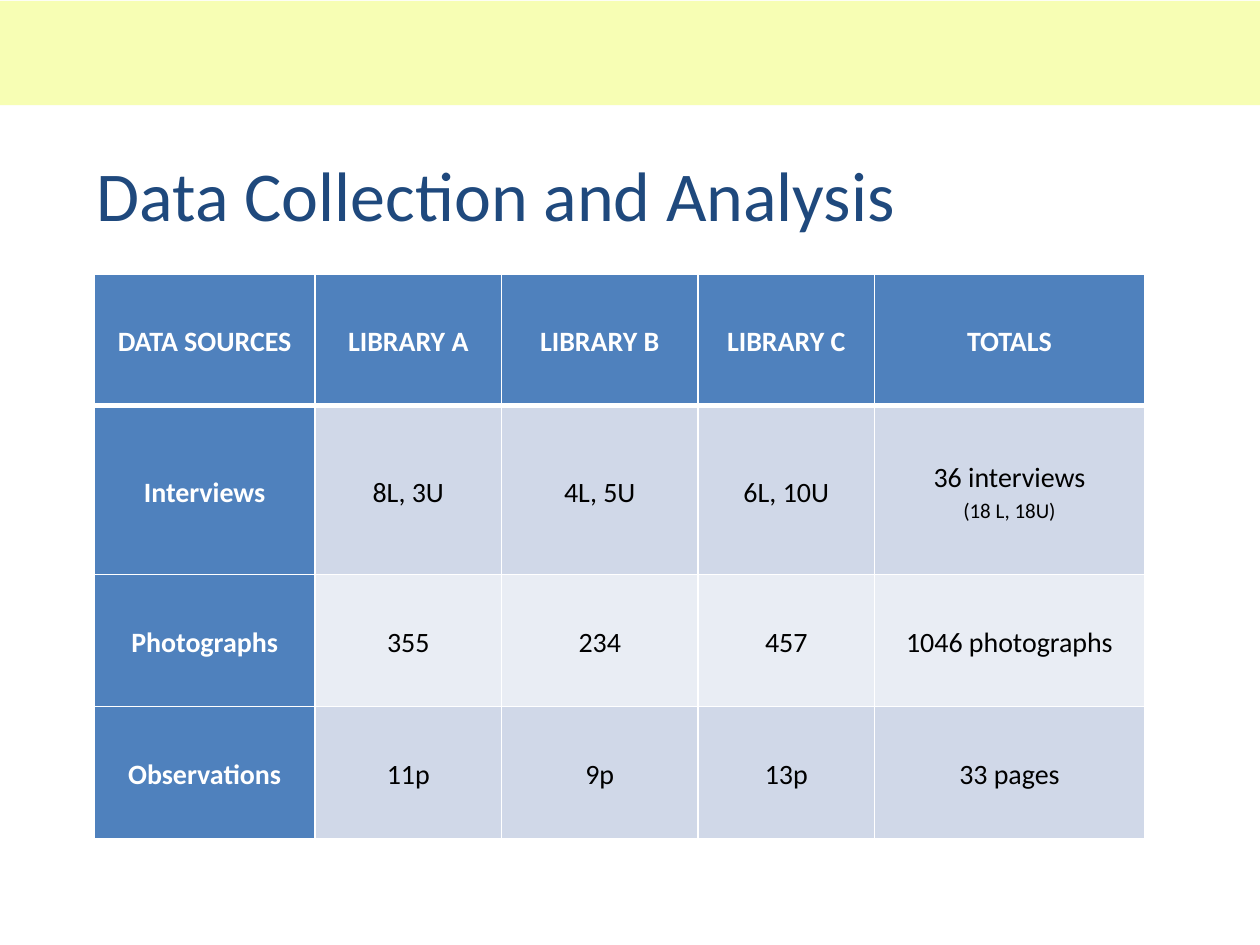
from dataclasses import dataclass

from lxml.etree import SubElement
from pptx import Presentation
from pptx.dml.color import RGBColor
from pptx.enum.shapes import MSO_SHAPE
from pptx.enum.text import MSO_ANCHOR, MSO_AUTO_SIZE, PP_ALIGN
from pptx.oxml.ns import qn
from pptx.util import Cm, Pt

BLUE, WHITE, BLACK = "4F81BD", "FFFFFF", "000000"
BANDS = ("D0D8E8", "E9EDF4")
COL_WIDTHS = (4.45, 3.76, 3.96, 3.56, 5.44)


@dataclass
class Row:
    height: float
    texts: tuple[str, ...]
    note: str = ""


ROWS = (
    Row(2.66, ("DATA SOURCES", "LIBRARY A", "LIBRARY B", "LIBRARY C", "TOTALS")),
    Row(3.4, ("Interviews", "8L, 3U", "4L, 5U", "6L, 10U", "36 interviews"), "(18 L, 18U)"),
    Row(2.66, ("Photographs", "355", "234", "457", "1046 photographs")),
    Row(2.66, ("Observations", "11p", "9p", "13p", "33 pages")),
)


def rgb(value: str) -> RGBColor:
    return RGBColor.from_string(value)


def write(p, text: str, *, size: float = 16, color: str = BLACK, bold: bool = False,
          align: PP_ALIGN = PP_ALIGN.CENTER, spacing: float = 1.15) -> None:
    p.alignment = align
    p.line_spacing = spacing
    r = p.add_run()
    r.text = text
    r.font.name = "Calibri"
    r.font.size = Pt(size)
    r.font.bold = bold
    r.font.color.rgb = rgb(color)


def add_borders(cell, bottom: float) -> None:
    tc_pr = cell._tc.get_or_add_tcPr()
    for side, width in (("L", 1), ("R", 1), ("T", 1), ("B", bottom)):
        ln = SubElement(tc_pr, qn(f"a:ln{side}"), w=str(Pt(width)))
        fill = SubElement(ln, qn("a:solidFill"))
        SubElement(fill, qn("a:srgbClr"), val=WHITE)


def format_cell(cell, fill: str, bottom: float) -> None:
    cell.vertical_anchor = MSO_ANCHOR.MIDDLE
    cell.margin_left = cell.margin_right = Cm(0.18)
    cell.margin_top = cell.margin_bottom = 0
    add_borders(cell, bottom)
    cell.fill.solid()
    cell.fill.fore_color.rgb = rgb(fill)


def add_banner(slide) -> None:
    sp = slide.shapes.add_shape(MSO_SHAPE.RECTANGLE, 0, Cm(0.02), Cm(25.4), Cm(2.1))
    sp.shadow.inherit = False
    sp.fill.solid()
    sp.fill.fore_color.rgb = rgb("F7FEB4")
    sp.line.fill.background()


def add_title(slide, text: str) -> None:
    sp = slide.shapes.title
    sp.left, sp.top, sp.width, sp.height = Cm(1.7), Cm(2.54), Cm(20.95), Cm(2.74)
    tf = sp.text_frame
    tf.auto_size = MSO_AUTO_SIZE.NONE
    tf.vertical_anchor = MSO_ANCHOR.MIDDLE
    write(tf.paragraphs[0], text, size=40, color="1F497D", align=PP_ALIGN.LEFT, spacing=1.0)


def add_data_table(slide) -> None:
    height = sum(row.height for row in ROWS)
    table = slide.shapes.add_table(len(ROWS), len(COL_WIDTHS), Cm(1.9), Cm(5.52),
                                   Cm(sum(COL_WIDTHS)), Cm(height)).table
    for column, width in zip(table.columns, COL_WIDTHS):
        column.width = Cm(width)
    for i, row in enumerate(ROWS):
        table.rows[i].height = Cm(row.height)
        for j, text in enumerate(row.texts):
            cell = table.cell(i, j)
            header = i == 0 or j == 0
            format_cell(cell, BLUE if header else BANDS[(i - 1) % 2], 3 if i == 0 else 1)
            write(cell.text_frame.paragraphs[0], text,
                  color=WHITE if header else BLACK, bold=header)
        if row.note:
            write(cell.text_frame.add_paragraph(), row.note, size=12)


def main() -> None:
    """Build the data collection slide and save it."""
    prs = Presentation()
    prs.slide_width, prs.slide_height = Cm(25.4), Cm(19.05)
    slide = prs.slides.add_slide(prs.slide_layouts[5])
    add_banner(slide)
    add_title(slide, "Data Collection and Analysis")
    add_data_table(slide)
    prs.save("out.pptx")


if __name__ == "__main__":
    main()
